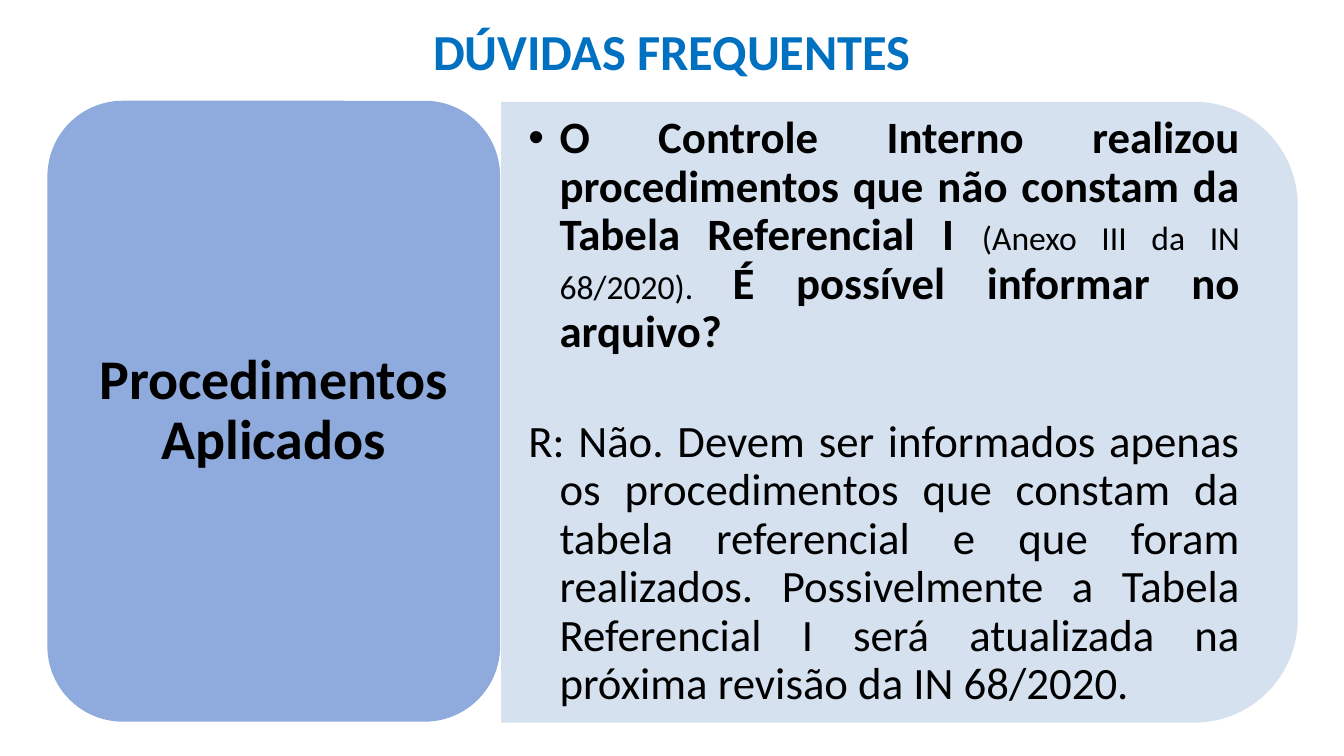
from lxml.etree import SubElement
from pptx import Presentation
from pptx.dml.color import RGBColor
from pptx.enum.shapes import MSO_SHAPE
from pptx.enum.text import MSO_ANCHOR, PP_ALIGN
from pptx.oxml.ns import qn
from pptx.util import Inches, Pt

COLORS = {"title": "0070C0", "text": "000000", "label": "8FAADC", "panel": "D2DEEF"}


class SlideBuilder:
    font_name = "Calibri"

    def __init__(self, slide):
        self.slide = slide

    def shape(self, preset, left, top, width, height, color, rotation=0, opacity=100):
        shape = self.slide.shapes.add_shape(
            preset, Inches(left), Inches(top), Inches(width), Inches(height))
        shape.shadow.inherit = False
        shape.rotation = rotation
        shape.fill.solid()
        shape.fill.fore_color.rgb = RGBColor.from_string(COLORS[color])
        shape.line.fill.background()
        if opacity < 100:
            fill_color = shape.fill._xPr.find(qn("a:solidFill"))[0]
            SubElement(fill_color, qn("a:alpha"), val=str(opacity * 1000))
        return shape

    def text_box(self, left, top, width, height):
        return self.slide.shapes.add_textbox(
            Inches(left), Inches(top), Inches(width), Inches(height))

    def frame(self, shape, margin_x, margin_y, anchor=MSO_ANCHOR.MIDDLE):
        frame = shape.text_frame
        frame.word_wrap = True
        frame.vertical_anchor = anchor
        frame.margin_left = frame.margin_right = Inches(margin_x)
        frame.margin_top = frame.margin_bottom = Inches(margin_y)
        return frame

    def paragraph(self, paragraph, runs, size, color="text", bold=False,
                  align=PP_ALIGN.CENTER, spacing=0.9, after=0, hanging=0, bullet=None):
        paragraph.alignment = align
        paragraph.line_spacing = spacing
        paragraph.space_after = Pt(after)
        properties = paragraph._p.get_or_add_pPr()
        if hanging:
            properties.set("marL", str(Inches(hanging)))
            properties.set("indent", str(-Inches(hanging)))
        if bullet:
            SubElement(properties, qn("a:buFont"), typeface="Arial")
            SubElement(properties, qn("a:buChar"), char=bullet)
        paragraph.font.name = self.font_name
        paragraph.font.size = Pt(size)
        paragraph.font.bold = bold
        paragraph.font.color.rgb = RGBColor.from_string(COLORS[color])
        for text, run_size, run_bold in runs:
            run = paragraph.add_run()
            run.text = text
            if (run_size, run_bold) != (size, bold):
                run.font.size = Pt(run_size)
                run.font.bold = run_bold


def main():
    presentation = Presentation()
    presentation.slide_width = Inches(13.33)
    presentation.slide_height = Inches(7.5)
    builder = SlideBuilder(presentation.slides.add_slide(presentation.slide_layouts[6]))

    # Title
    title = builder.frame(builder.text_box(0.72, 0.15, 11.89, 0.71), 0.1, 0.05, MSO_ANCHOR.TOP)
    builder.paragraph(title.paragraphs[0], [("DÚVIDAS FREQUENTES", 36, True)],
                      36, "title", bold=True, spacing=1.0)

    # Answer panel, rounded on its right side
    builder.shape(MSO_SHAPE.ROUND_2_SAME_RECTANGLE, 5.84, 0.14, 6.16, 7.9,
                  "panel", rotation=90, opacity=90)

    # Question and answer
    body = builder.frame(builder.text_box(4.97, 1.31, 7.6, 5.56), 0.27, 0.14)
    question = [
        ("O Controle Interno realizou procedimentos que não constam da Tabela Referencial I ",
         32, True),
        ("(Anexo III da IN 68/2020). ", 24, False),
        ("É possível informar no arquivo?", 32, True),
    ]
    answer = [(
        "R: Não. Devem ser informados apenas os procedimentos que constam da tabela "
        "referencial e que foram realizados. Possivelmente a Tabela Referencial I será "
        "atualizada na próxima revisão da IN 68/2020.", 32, False)]
    builder.paragraph(body.paragraphs[0], question, 32, bold=True, align=PP_ALIGN.JUSTIFY,
                      after=44, hanging=0.31, bullet="•")
    builder.paragraph(body.add_paragraph(), answer, 32, align=PP_ALIGN.JUSTIFY,
                      after=5, hanging=0.31)

    # Topic label
    label = builder.shape(MSO_SHAPE.ROUNDED_RECTANGLE, 0.47, 1, 4.49, 6.16, "label")
    builder.paragraph(builder.frame(label, 0.17, 0.08).paragraphs[0],
                      [("Procedimentos Aplicados", 40, True)], 40, bold=True, after=14)

    presentation.save("out.pptx")


if __name__ == "__main__":
    main()
